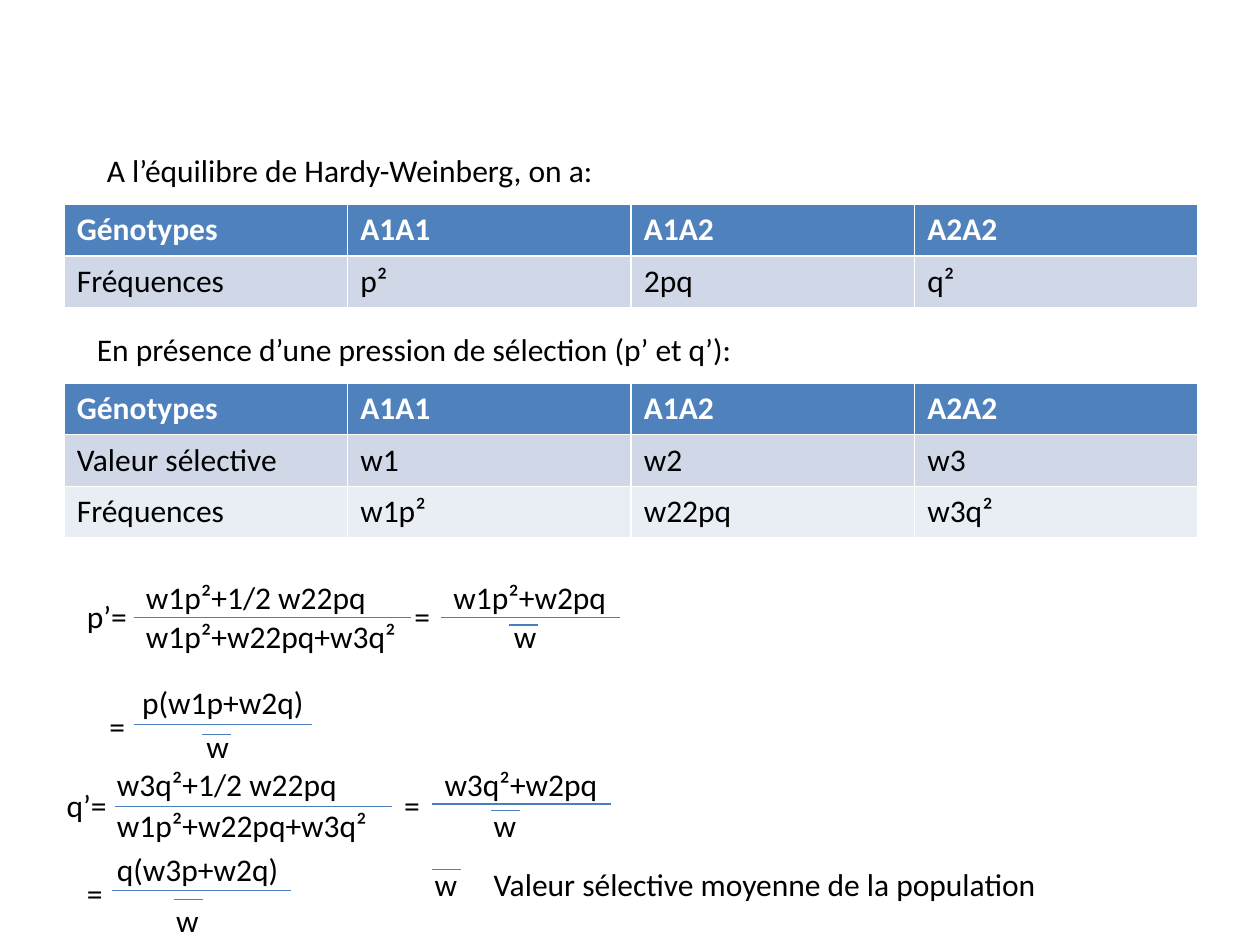
"""Build the Hardy-Weinberg selection slide with two tables and the allele frequency formulas."""
from dataclasses import dataclass
from typing import NamedTuple

from pptx import Presentation
from pptx.dml.color import RGBColor
from pptx.enum.shapes import MSO_CONNECTOR
from pptx.enum.text import MSO_AUTO_SIZE
from pptx.oxml.ns import qn
from pptx.slide import Slide
from pptx.text.text import TextFrame
from pptx.util import Emu, Pt

EMU_PER_PX = 9144
LABEL_H = 40
TABLE_X, COL_W, ROW_H = 51, 225, 41
EQUALS_W, SHORT_W, LONG_W = 39, 157, 220
BAR_W, SHORT_RULE_W, LONG_RULE_W = 23, 142, 220


@dataclass(frozen=True)
class Theme:
    font: str = "Calibri"
    size: Pt = Pt(18)
    rule_width: Pt = Pt(0.75)
    text: RGBColor = RGBColor(0x00, 0x00, 0x00)
    header_text: RGBColor = RGBColor(0xFF, 0xFF, 0xFF)
    header_fill: RGBColor = RGBColor(0x4F, 0x81, 0xBD)
    odd_fill: RGBColor = RGBColor(0xD0, 0xD8, 0xE8)
    even_fill: RGBColor = RGBColor(0xE9, 0xED, 0xF4)
    rule: RGBColor = RGBColor(0x4B, 0x7E, 0xBC)


class Label(NamedTuple):
    x: int
    y: int
    w: int
    text: str


class Rule(NamedTuple):
    x: int
    y: int
    w: int


class Grid(NamedTuple):
    y: int
    rows: list[list[str]]


THEME = Theme()
GENOTYPES = ["Génotypes", "A1A1", "A1A2", "A2A2"]
GRIDS = [
    Grid(162, [GENOTYPES, ["Fréquences", "p²", "2pq", "q²"]]),
    Grid(304, [GENOTYPES,
               ["Valeur sélective", "w1", "w2", "w3"],
               ["Fréquences", "w1p²", "w22pq", "w3q²"]]),
]
LABELS = [
    Label(75, 115, 543, "A l’équilibre de Hardy-Weinberg, on a:"),
    Label(67, 257, 543, "En présence d’une pression de sélection (p’ et q’):"),
    Label(59, 469, 55, "p’="),
    Label(106, 454, LONG_W, "w1p²+1/2 w22pq"),
    Label(106, 485, LONG_W, "w1p²+w22pq+w3q²"),
    Label(319, 469, EQUALS_W, "="),
    Label(350, 454, SHORT_W, "w1p²+w2pq"),
    Label(398, 485, EQUALS_W, "w"),
    Label(77, 556, EQUALS_W, "="),
    Label(103, 537, SHORT_W, "p(w1p+w2q)"),
    Label(154, 572, EQUALS_W, "w"),
    Label(43, 619, 55, "q’="),
    Label(83, 602, LONG_W, "w3q²+1/2 w22pq"),
    Label(83, 635, LONG_W, "w1p²+w22pq+w3q²"),
    Label(311, 619, EQUALS_W, "="),
    Label(343, 602, SHORT_W, "w3q²+w2pq"),
    Label(382, 635, EQUALS_W, "w"),
    Label(59, 689, EQUALS_W, "="),
    Label(83, 670, SHORT_W, "q(w3p+w2q)"),
    Label(130, 710, EQUALS_W, "w"),
    Label(335, 682, EQUALS_W, "w"),
    Label(382, 682, 480, "Valeur sélective moyenne de la population"),
]
RULES = [
    Rule(106, 490, LONG_RULE_W),
    Rule(350, 490, SHORT_RULE_W),
    Rule(404, 496, BAR_W),
    Rule(106, 575, SHORT_RULE_W),
    Rule(160, 583, BAR_W),
    Rule(91, 640, LONG_RULE_W),
    Rule(343, 638, SHORT_RULE_W),
    Rule(390, 643, BAR_W),
    Rule(89, 707, SHORT_RULE_W),
    Rule(138, 714, BAR_W),
    Rule(343, 690, BAR_W),
]


def px(n: int) -> Emu:
    return Emu(n * EMU_PER_PX)


def write(tf: TextFrame, text: str, color: RGBColor, bold: bool = False) -> None:
    r = tf.paragraphs[0].add_run()
    r.text = text
    r.font.name = THEME.font
    r.font.size = THEME.size
    r.font.bold = bold
    r.font.color.rgb = color


def draw_grid(s: Slide, grid: Grid) -> None:
    n_rows, n_cols = len(grid.rows), len(grid.rows[0])
    table = s.shapes.add_table(n_rows, n_cols, px(TABLE_X), px(grid.y),
                               px(COL_W * n_cols), px(ROW_H * n_rows)).table
    for i, row in enumerate(grid.rows):
        header = i == 0
        band = THEME.odd_fill if i % 2 else THEME.even_fill
        for cell, text in zip(table.rows[i].cells, row):
            cell.fill.solid()
            cell.fill.fore_color.rgb = THEME.header_fill if header else band
            color = THEME.header_text if header else THEME.text
            write(cell.text_frame, text, color, header)


def draw_label(s: Slide, label: Label) -> None:
    sp = s.shapes.add_textbox(px(label.x), px(label.y), px(label.w), px(LABEL_H))
    tf = sp.text_frame
    tf.word_wrap = True
    tf.auto_size = MSO_AUTO_SIZE.SHAPE_TO_FIT_TEXT
    write(tf, label.text, THEME.text)


def draw_rule(s: Slide, rule: Rule) -> None:
    line = s.shapes.add_connector(MSO_CONNECTOR.STRAIGHT, px(rule.x), px(rule.y),
                                  px(rule.x + rule.w), px(rule.y))
    line.line.color.rgb = THEME.rule
    line.line.width = THEME.rule_width
    sp_pr = line._element.spPr
    sp_pr.append(sp_pr.makeelement(qn("a:effectLst"), {}))


def main() -> None:
    prs = Presentation()
    prs.slide_width, prs.slide_height = px(1000), px(750)
    s = prs.slides.add_slide(prs.slide_layouts[6])
    for grid in GRIDS:
        draw_grid(s, grid)
    for label in LABELS:
        draw_label(s, label)
    for rule in RULES:
        draw_rule(s, rule)
    prs.save("out.pptx")


if __name__ == "__main__":
    main()
